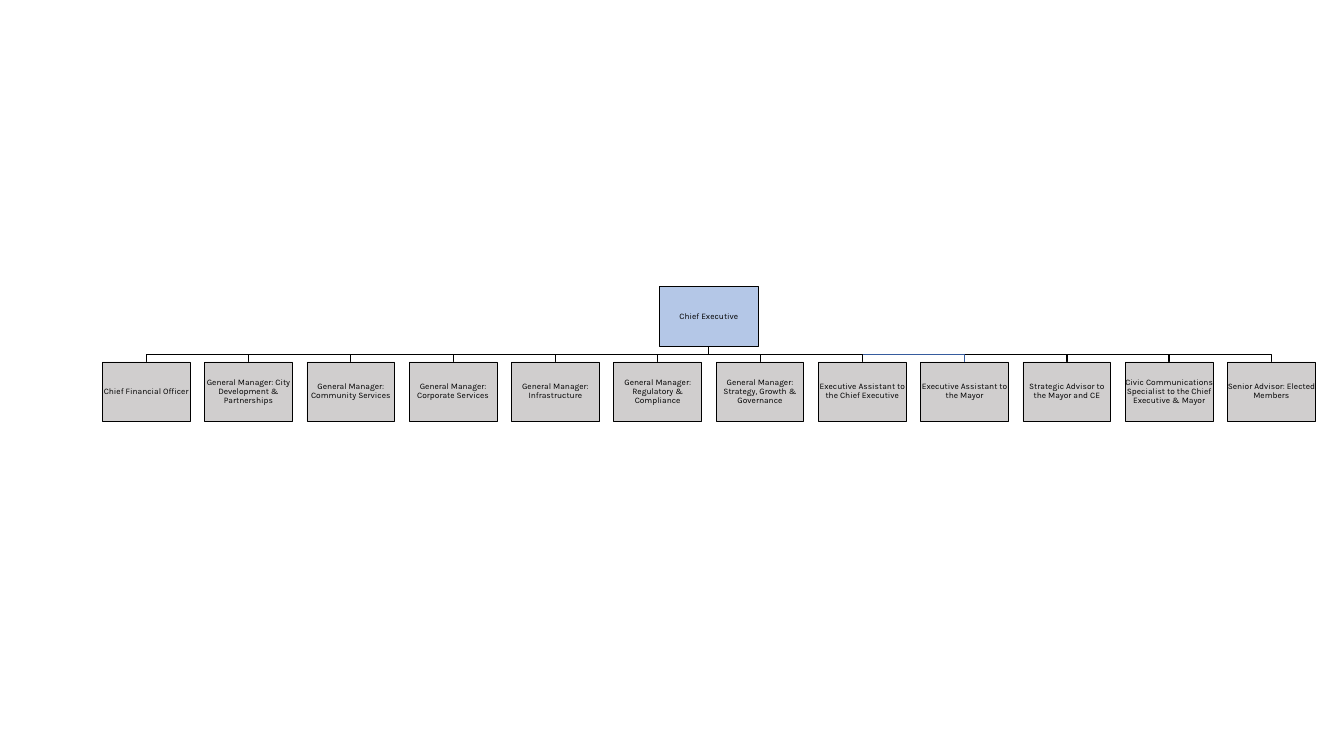
import pptx
import pptx.util
import pptx.dml.color
import pptx.enum.shapes
import pptx.enum.text

EXECUTIVE = "Chief Executive"
REPORTS = [
    ("Chief Financial Officer", "black", 1),
    ("General Manager: City Development & Partnerships", "black", 0.5),
    ("General Manager: Community Services", "black", 0.5),
    ("General Manager: Corporate Services", "black", 0.5),
    ("General Manager: Infrastructure", "black", 1),
    ("General Manager: Regulatory & Compliance", "black", 1),
    ("General Manager: Strategy, Growth & Governance", "black", 0.5),
    ("Executive Assistant to the Chief Executive", "black", 1),
    ("Executive Assistant to the Mayor", "blue", 1),
    ("Strategic Advisor to the Mayor and CE", "black", 1),
    ("Civic Communications Specialist to the Chief Executive & Mayor", "black", 1),
    ("Senior Advisor: Elected Members", "black", 1),
]
COLORS = {"black": "000000", "blue": "365B9D", "executive": "B4C7E7", "report": "D0CECE"}

inch = pptx.util.Inches
SLIDE_W, SLIDE_H = inch(13.33), inch(7.5)
FIRST_CENTER, LAST_CENTER = inch(1.45), inch(12.61)
PITCH = (LAST_CENTER - FIRST_CENTER) / (len(REPORTS) - 1)
EXECUTIVE_CENTER = (FIRST_CENTER + LAST_CENTER) / 2
EXECUTIVE_TOP, EXECUTIVE_W, EXECUTIVE_H = inch(2.84), inch(0.98), inch(0.6)
REPORT_TOP, REPORT_W, REPORT_H = inch(3.59), inch(0.87), inch(0.59)
EXECUTIVE_BOTTOM = EXECUTIVE_TOP + EXECUTIVE_H
RAIL_Y = (EXECUTIVE_BOTTOM + REPORT_TOP) / 2


def rgb(name):
    return pptx.dml.color.RGBColor.from_string(COLORS[name])


def outline(shape, color, weight):
    shape.shadow.inherit = False
    shape.line.color.rgb = rgb(color)
    shape.line.width = pptx.util.Pt(weight)


def write(shape, text, size=6, font="Karla", color="black"):
    frame = shape.text_frame
    frame.word_wrap = True
    frame.vertical_anchor = pptx.enum.text.MSO_ANCHOR.MIDDLE
    frame.margin_left = frame.margin_right = frame.margin_top = frame.margin_bottom = 0
    paragraph = frame.paragraphs[0]
    paragraph.alignment = pptx.enum.text.PP_ALIGN.CENTER
    paragraph.line_spacing = 0.9
    paragraph.space_after = pptx.util.Pt(size * 0.35)
    run = paragraph.add_run()
    run.text = text
    run.font.size = pptx.util.Pt(size)
    run.font.name = font
    run.font.color.rgb = rgb(color)


def add_post(slide, title, center, top, width, height, fill):
    post = slide.shapes.add_shape(
        pptx.enum.shapes.MSO_SHAPE.RECTANGLE, round(center - width / 2), top, width, height)
    post.fill.solid()
    post.fill.fore_color.rgb = rgb(fill)
    outline(post, "black", 0.5)
    write(post, title)


def add_branch(slide, center, color, weight):
    builder = slide.shapes.build_freeform(EXECUTIVE_CENTER, EXECUTIVE_BOTTOM)
    builder.add_line_segments(
        [(EXECUTIVE_CENTER, RAIL_Y), (center, RAIL_Y), (center, REPORT_TOP)], close=False)
    branch = builder.convert_to_shape()
    branch.fill.background()
    outline(branch, color, weight)


def main():
    deck = pptx.Presentation()
    deck.slide_width, deck.slide_height = SLIDE_W, SLIDE_H
    slide = deck.slides.add_slide(deck.slide_layouts[6])

    centers = [FIRST_CENTER + i * PITCH for i in range(len(REPORTS))]
    for center, (_, color, weight) in reversed(list(zip(centers, REPORTS))):
        add_branch(slide, center, color, weight)

    add_post(slide, EXECUTIVE, EXECUTIVE_CENTER, EXECUTIVE_TOP, EXECUTIVE_W, EXECUTIVE_H, "executive")
    for center, (title, _, _) in zip(centers, REPORTS):
        add_post(slide, title, center, REPORT_TOP, REPORT_W, REPORT_H, "report")

    deck.save("out.pptx")


if __name__ == "__main__":
    main()
